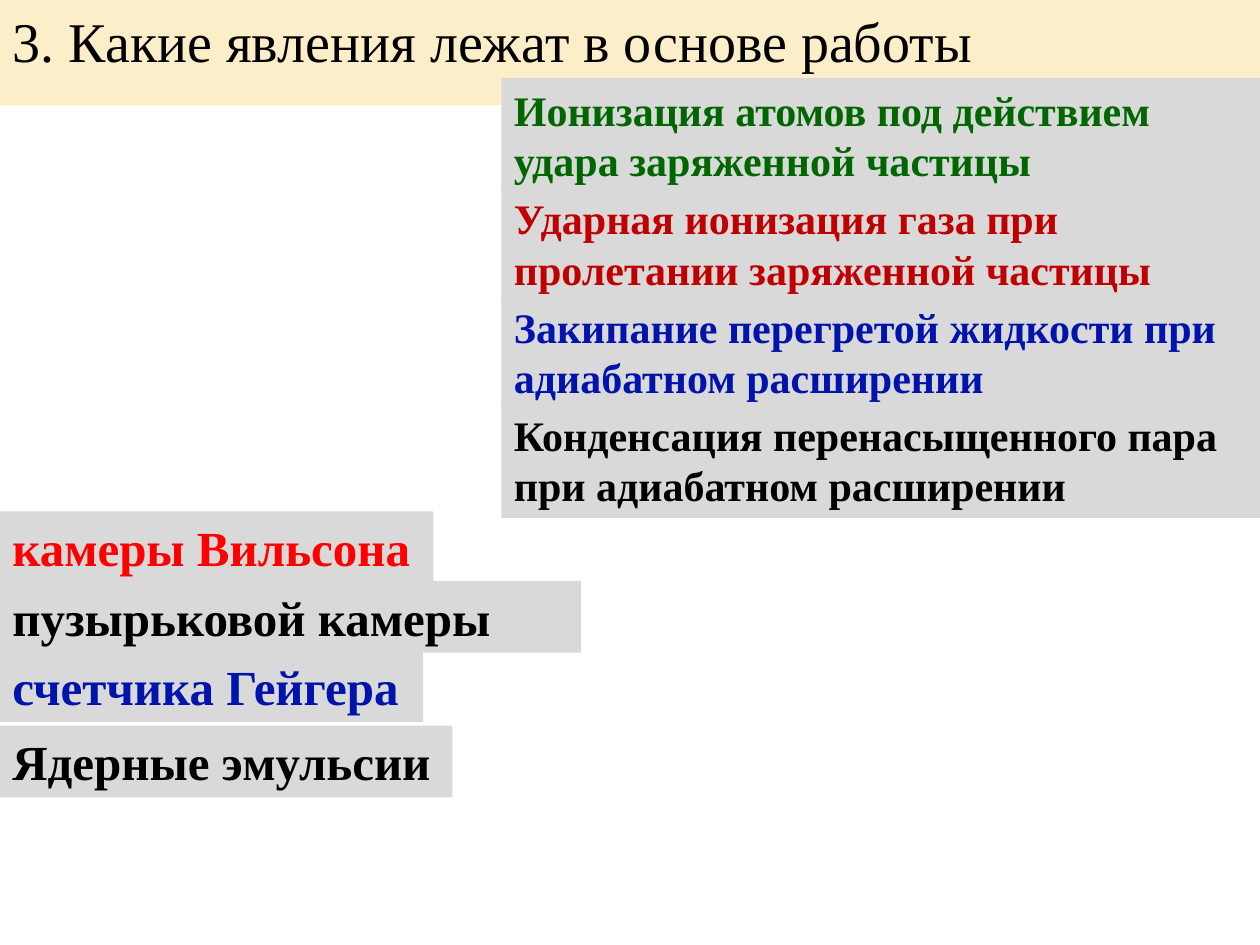
"""Build a slide matching particle detectors with the phenomena behind them."""
import pptx
import pptx.dml.color
import pptx.enum.text
import pptx.util

Inches = pptx.util.Inches
COLOURS = {
    "cream": "FBEEC9", "grey": "D9D9D9", "black": "000000", "red": "FF0000",
    "dark red": "C00000", "blue": "0014AC", "green": "006600",
}
DETECTORS = [
    ("камеры Вильсона", "red", 4.06, 3.44),
    ("Ядерные эмульсии", "black", 5.76, 3.59),
    ("пузырьковой камеры", "black", 4.61, 4.61),
    ("счетчика Гейгера", "blue", 5.16, 3.36),
]
PHENOMENA = [
    ("Ионизация атомов под действием удара заряженной частицы", "green"),
    ("Ударная ионизация газа при пролетании заряженной частицы", "dark red"),
    ("Закипание перегретой жидкости при адиабатном расширении", "blue"),
    ("Конденсация перенасыщенного пара при адиабатном расширении", "black"),
]
PHENOMENA_TOP, PHENOMENA_STEP = 0.62, 0.86


def colour(name):
    return pptx.dml.color.RGBColor.from_string(COLOURS[name])


def place(box, left, top, width, height):
    box.left, box.top = Inches(left), Inches(top)
    box.width, box.height = Inches(width), Inches(height)


def write(box, text, size, ink="black", bold=True, fill="grey"):
    box.fill.solid()
    box.fill.fore_color.rgb = colour(fill)
    frame = box.text_frame
    frame.word_wrap = True
    frame.auto_size = pptx.enum.text.MSO_AUTO_SIZE.SHAPE_TO_FIT_TEXT
    frame.vertical_anchor = pptx.enum.text.MSO_ANCHOR.TOP
    para = frame.paragraphs[0]
    para.alignment = pptx.enum.text.PP_ALIGN.LEFT
    span = para.add_run()
    span.text = text
    span.font.name = "Times New Roman"
    span.font.size = pptx.util.Pt(size)
    span.font.bold = bold
    span.font.color.rgb = colour(ink)


def add_label(page, text, position, **style):
    box = page.shapes.add_textbox(*map(Inches, position))
    write(box, text, **style)


def main():
    deck = pptx.Presentation()
    deck.slide_width, deck.slide_height = Inches(10), Inches(7.5)
    page = deck.slides.add_slide(deck.slide_layouts.get_by_name("Title Only"))

    title = page.shapes.title
    place(title, 0, 0, 10, 0.64)
    write(title, "3. Какие явления лежат в основе работы", 32, bold=False, fill="cream")

    for text, ink, top, width in DETECTORS:
        add_label(page, text, (0, top, width, 0.57), size=28, ink=ink)

    for row, (text, ink) in reversed(list(enumerate(PHENOMENA))):
        top = PHENOMENA_TOP + row * PHENOMENA_STEP
        add_label(page, text, (3.98, top, 6.02, 0.91), size=24, ink=ink)

    deck.save("out.pptx")


if __name__ == "__main__":
    main()
